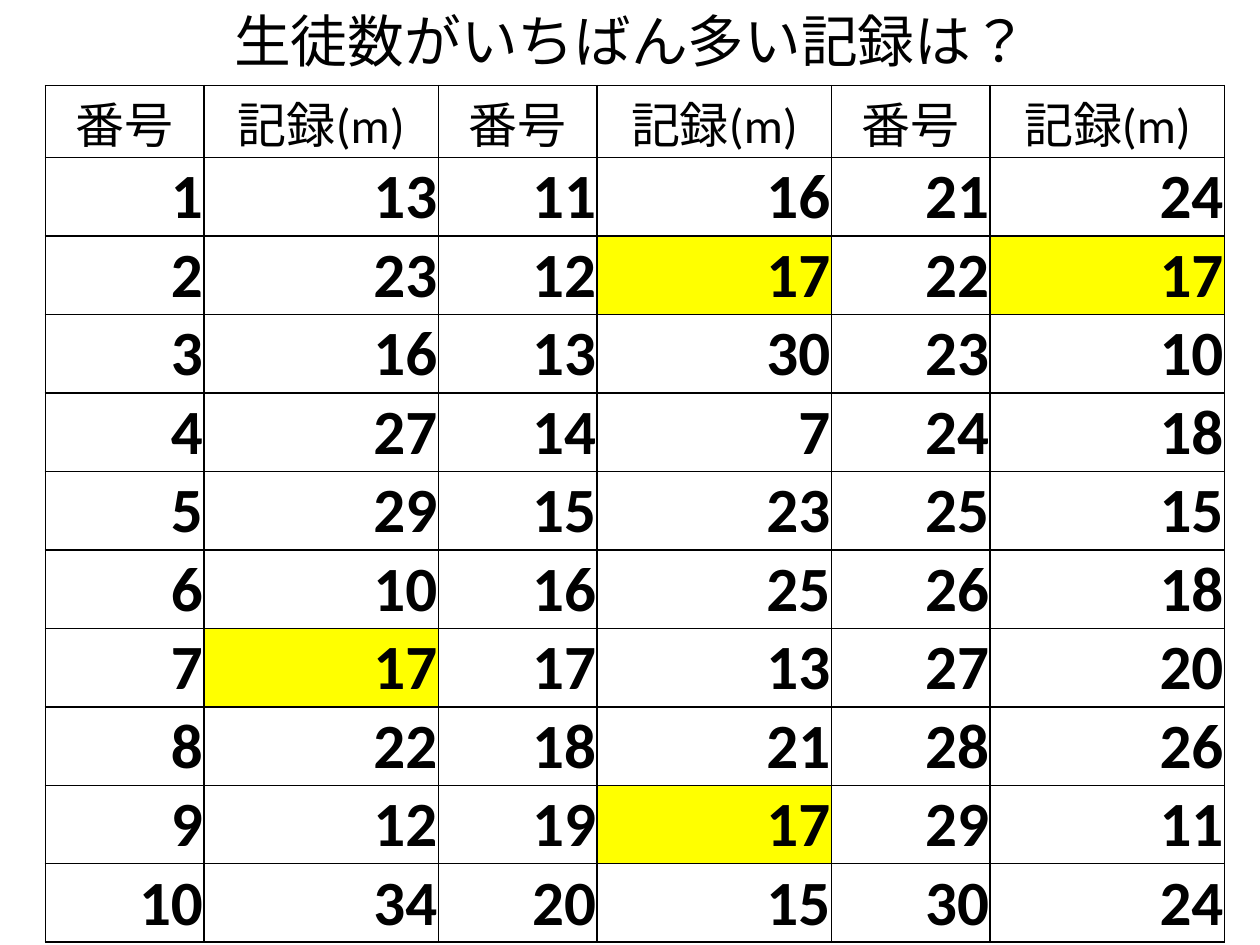
from collections import namedtuple
from lxml import etree
from pptx import Presentation
from pptx import util as u
from pptx.dml.color import RGBColor
from pptx.enum import lang, text
from pptx.oxml.ns import qn

TITLE = "生徒数がいちばん多い記録は？"
HEADS = ("番号", "記録(m)")
MARKS = (
    (13, 23, 16, 27, 29, 10, 17, 22, 12, 34),
    (16, 17, 30, 7, 23, 25, 13, 21, 17, 15),
    (24, 17, 10, 18, 15, 18, 20, 26, 11, 24),
)
MODE = 17
WIDTHS = (1.26, 1.86)
FULL_H, HEAD_H = 6.8, 0.57

Theme = namedtuple("Theme", "font ink mark title head body line")
theme = Theme("Calibri", "000000", "FFFF00", 32.4, 28, 36, 1)


def write(frame, words, size, align, bold=False):
    frame.text = words
    frame.vertical_anchor = text.MSO_ANCHOR.MIDDLE
    para = frame.paragraphs[0]
    para.alignment = align
    font = para.runs[0].font
    font.name = theme.font
    font.size = u.Pt(size)
    font.bold = bold
    font.color.rgb = RGBColor.from_string(theme.ink)
    font.language_id = lang.MSO_LANGUAGE_ID.JAPANESE


def border(cell):
    props = cell._tc.get_or_add_tcPr()
    for spot, side in enumerate(("lnL", "lnR", "lnT", "lnB")):
        line = etree.Element(qn("a:" + side), w=str(u.Pt(theme.line)))
        fill = etree.SubElement(line, qn("a:solidFill"))
        etree.SubElement(fill, qn("a:srgbClr"), val=theme.ink)
        props.insert(spot, line)


def style(cell, words, head, marked):
    if head:
        write(cell.text_frame, words, theme.head, text.PP_ALIGN.CENTER)
    else:
        write(cell.text_frame, words, theme.body, text.PP_ALIGN.RIGHT, True)
    cell.vertical_anchor = text.MSO_ANCHOR.MIDDLE
    cell.margin_left = cell.margin_right = cell.margin_top = u.Inches(0.01)
    cell.margin_bottom = 0
    if marked:
        cell.fill.solid()
        cell.fill.fore_color.rgb = RGBColor.from_string(theme.mark)
    else:
        cell.fill.background()
    border(cell)


def add_title(slide):
    box = slide.shapes.add_textbox(
        u.Inches(0.51), 0, u.Inches(9), u.Inches(0.63))
    box.text_frame.word_wrap = True
    write(box.text_frame, TITLE, theme.title, text.PP_ALIGN.CENTER)


def add_marks(slide):
    count = len(MARKS[0])
    widths = WIDTHS * len(MARKS)
    table = slide.shapes.add_table(
        count + 1, len(widths), u.Inches(0.36), u.Inches(0.68),
        u.Inches(sum(widths)), u.Inches(FULL_H)).table
    table.first_row = table.horz_banding = False
    for col, width in zip(table.columns, widths):
        col.width = u.Inches(width)
    row_h = (FULL_H - HEAD_H) / count
    for num, row in enumerate(table.rows):
        row.height = u.Inches(row_h if num else HEAD_H)
    for group, marks in enumerate(MARKS):
        left = group * len(HEADS)
        for side, head in enumerate(HEADS):
            style(table.cell(0, left + side), head, True, False)
        for row, mark in enumerate(marks, 1):
            style(table.cell(row, left), str(group * count + row), False, False)
            style(table.cell(row, left + 1), str(mark), False, mark == MODE)


def main():
    deck = Presentation()
    deck.slide_width, deck.slide_height = u.Inches(10), u.Inches(7.5)
    slide = deck.slides.add_slide(deck.slide_layouts[6])
    add_title(slide)
    add_marks(slide)
    deck.save("out.pptx")


if __name__ == "__main__":
    main()
